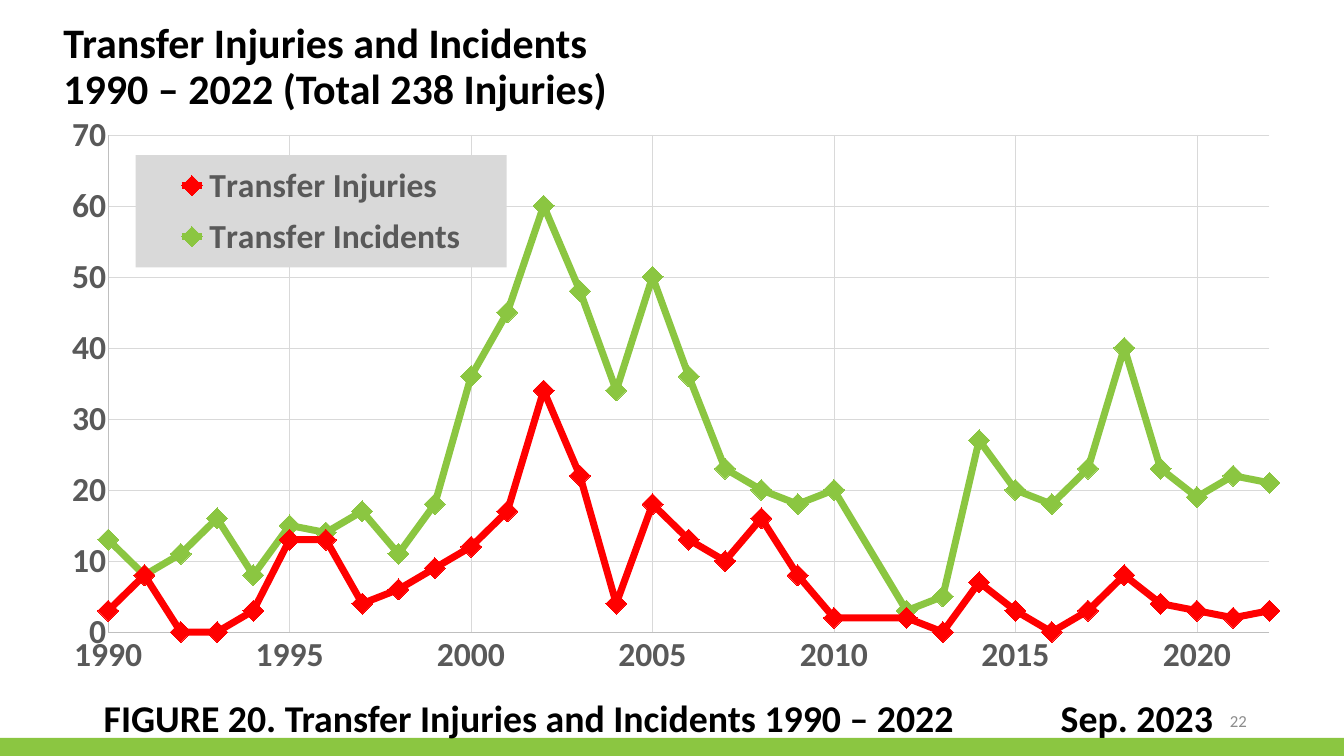
"""Build the slide charting transfer injuries and incidents by year."""
from pptx import Presentation
from pptx.chart.data import XyChartData
from pptx.dml.color import RGBColor
from pptx.enum.chart import XL_CHART_TYPE, XL_LEGEND_POSITION, XL_MARKER_STYLE, XL_TICK_MARK
from pptx.enum.shapes import MSO_SHAPE
from pptx.enum.text import MSO_ANCHOR, MSO_AUTO_SIZE, PP_ALIGN
from pptx.oxml import parse_xml
from pptx.oxml.ns import nsdecls
from pptx.util import Inches, Pt

SCATTER_LINES = XL_CHART_TYPE.XY_SCATTER_LINES
LEGEND_BOTTOM = XL_LEGEND_POSITION.BOTTOM
DIAMOND = XL_MARKER_STYLE.DIAMOND
NO_TICK = XL_TICK_MARK.NONE
RECTANGLE = MSO_SHAPE.RECTANGLE
TOP, MIDDLE = MSO_ANCHOR.TOP, MSO_ANCHOR.MIDDLE
LEFT, RIGHT = PP_ALIGN.LEFT, PP_ALIGN.RIGHT
NO_AUTOFIT = MSO_AUTO_SIZE.NONE

FONT = "Calibri"
BLACK = RGBColor(0x00, 0x00, 0x00)
GREEN = RGBColor(0x8B, 0xC6, 0x41)
RED = RGBColor(0xFF, 0x00, 0x00)
LABEL_GRAY = RGBColor(0x59, 0x59, 0x59)
NUMBER_GRAY = RGBColor(0x8C, 0x8C, 0x8C)
AXIS_GRAY = RGBColor(0xBF, 0xBF, 0xBF)
GRID_GRAY = RGBColor(0xD9, 0xD9, 0xD9)

SLIDE_WIDTH, SLIDE_HEIGHT, BAND_HEIGHT = 26.67, 15, 0.36
HEADING = ["Transfer Injuries and Incidents", "1990 – 2022 (Total 238 Injuries)"]
CAPTION = "FIGURE 20. Transfer Injuries and Incidents 1990 – 2022\tSep. 2023"
DATE_TAB = 18.99
PAGE_NUMBER = "22"

YEARS = [year for year in range(1990, 2023) if year != 2011]
SERIES = [
    ("Transfer Injuries", RED,
     [3, 8, 0, 0, 3, 13, 13, 4, 6, 9, 12, 17, 34, 22, 4, 18,
      13, 10, 16, 8, 2, 2, 0, 7, 3, 0, 3, 8, 4, 3, 2, 3]),
    ("Transfer Incidents", GREEN,
     [13, 8, 11, 16, 8, 15, 14, 17, 11, 18, 36, 45, 60, 48, 34, 50,
      36, 23, 20, 18, 20, 3, 5, 27, 20, 18, 23, 40, 23, 19, 22, 21]),
]
PLOT_LAYOUT = (0.066, 0.041, 0.886, 0.852)
LEGEND_LAYOUT = (0.087, 0.076, 0.283, 0.192)


def set_font(font, size, color, bold=True):
    font.name, font.size, font.bold = FONT, Pt(size), bold
    font.color.rgb = color


def add_text(slide, box, text, size, color, bold=True):
    frame = slide.shapes.add_textbox(*map(Inches, box)).text_frame
    frame.word_wrap = True
    paragraph = frame.paragraphs[0]
    paragraph.text = text
    set_font(paragraph.font, size, color, bold)
    return frame, paragraph


def manual_layout(bounds, target=""):
    x, y, w, h = bounds
    return parse_xml(
        f'<c:layout {nsdecls("c")}><c:manualLayout>{target}'
        '<c:xMode val="edge"/><c:yMode val="edge"/>'
        f'<c:x val="{x}"/><c:y val="{y}"/><c:w val="{w}"/><c:h val="{h}"/>'
        '</c:manualLayout></c:layout>')


def style_axis(axis, low, high, step):
    axis.minimum_scale, axis.maximum_scale, axis.major_unit = low, high, step
    axis.major_tick_mark = axis.minor_tick_mark = NO_TICK
    axis.has_major_gridlines = True
    for line, color in ((axis.format.line, AXIS_GRAY),
                        (axis.major_gridlines.format.line, GRID_GRAY)):
        line.color.rgb, line.width = color, Pt(0.75)
    set_font(axis.tick_labels.font, 48, LABEL_GRAY)


def place_plot(chart):
    plot_area = chart.element.xpath("c:chart/c:plotArea")[0]
    for layout in plot_area.xpath("c:layout"):
        plot_area.remove(layout)
    plot_area.insert(0, manual_layout(PLOT_LAYOUT, '<c:layoutTarget val="inner"/>'))


def add_legend(chart):
    chart.has_legend = True
    legend = chart.legend
    legend.position = LEGEND_BOTTOM
    legend.include_in_layout = True
    set_font(legend.font, 48, LABEL_GRAY)
    root = chart.element.xpath("c:chart/c:legend")[0]
    for layout in root.xpath("c:layout"):
        root.remove(layout)
    root.xpath("c:legendPos")[0].addnext(manual_layout(LEGEND_LAYOUT))
    root.xpath("c:overlay")[0].addnext(parse_xml(
        f'<c:spPr {nsdecls("c", "a")}><a:solidFill><a:srgbClr val="{GRID_GRAY}"/>'
        '</a:solidFill></c:spPr>'))


def add_transfer_chart(slide):
    data = XyChartData()
    for name, _, counts in SERIES:
        points = data.add_series(name)
        for year, count in zip(YEARS, counts):
            points.add_data_point(year, count)
    box = map(Inches, (0.43, 2.2, 26.01, 11.58))
    chart = slide.shapes.add_chart(SCATTER_LINES, *box, data).chart
    chart.has_title = False
    chart.font.name, chart.font.size = FONT, Pt(10)
    chart.plots[0].vary_by_categories = False
    for series, (_, color, _) in zip(chart.plots[0].series, SERIES):
        series.smooth = False
        series.format.line.color.rgb, series.format.line.width = color, Pt(10)
        marker = series.marker
        marker.style, marker.size = DIAMOND, 30
        marker.format.fill.solid()
        marker.format.fill.fore_color.rgb = color
        marker.format.line.color.rgb = color
    style_axis(chart.category_axis, YEARS[0], YEARS[-1], 5)
    style_axis(chart.value_axis, 0, 70, 10)
    place_plot(chart)
    add_legend(chart)


def add_heading(slide):
    title = slide.shapes.title
    title.left, title.top, title.width, title.height = map(Inches, (1.16, 0.4, 18.8, 1.39))
    frame = title.text_frame
    frame.text = "\n".join(HEADING)
    frame.auto_size, frame.vertical_anchor = NO_AUTOFIT, TOP
    for paragraph in frame.paragraphs:
        paragraph.alignment, paragraph.line_spacing = LEFT, 0.9
        paragraph.space_before = Pt(0)
        set_font(paragraph.font, 60, BLACK)


def add_footer(slide):
    band_top = SLIDE_HEIGHT - BAND_HEIGHT
    band = slide.shapes.add_shape(
        RECTANGLE, *map(Inches, (0, band_top, SLIDE_WIDTH, BAND_HEIGHT)))
    band.shadow.inherit = False
    band.fill.solid()
    band.fill.fore_color.rgb = GREEN
    band.line.fill.background()

    number_frame, number = add_text(
        slide, (18.84, 13.9, 6, 0.8), PAGE_NUMBER, 24, NUMBER_GRAY, False)
    number_frame.vertical_anchor = MIDDLE
    number.alignment = RIGHT

    _, caption = add_text(slide, (1.96, 13.83, 22.29, 1.17), CAPTION, 54, BLACK)
    caption.line_spacing = 0.9
    properties = caption.font._element.getparent()
    properties.insert(0, parse_xml(
        f'<a:tabLst {nsdecls("a")}><a:tab pos="{Inches(DATE_TAB)}" algn="l"/></a:tabLst>'))
    properties.insert(0, properties.xpath("a:lnSpc")[0])


def main():
    deck = Presentation()
    deck.slide_width, deck.slide_height = Inches(SLIDE_WIDTH), Inches(SLIDE_HEIGHT)
    slide = deck.slides.add_slide(deck.slide_layouts[5])
    add_heading(slide)
    add_footer(slide)
    add_transfer_chart(slide)
    deck.save("out.pptx")


if __name__ == "__main__":
    main()
